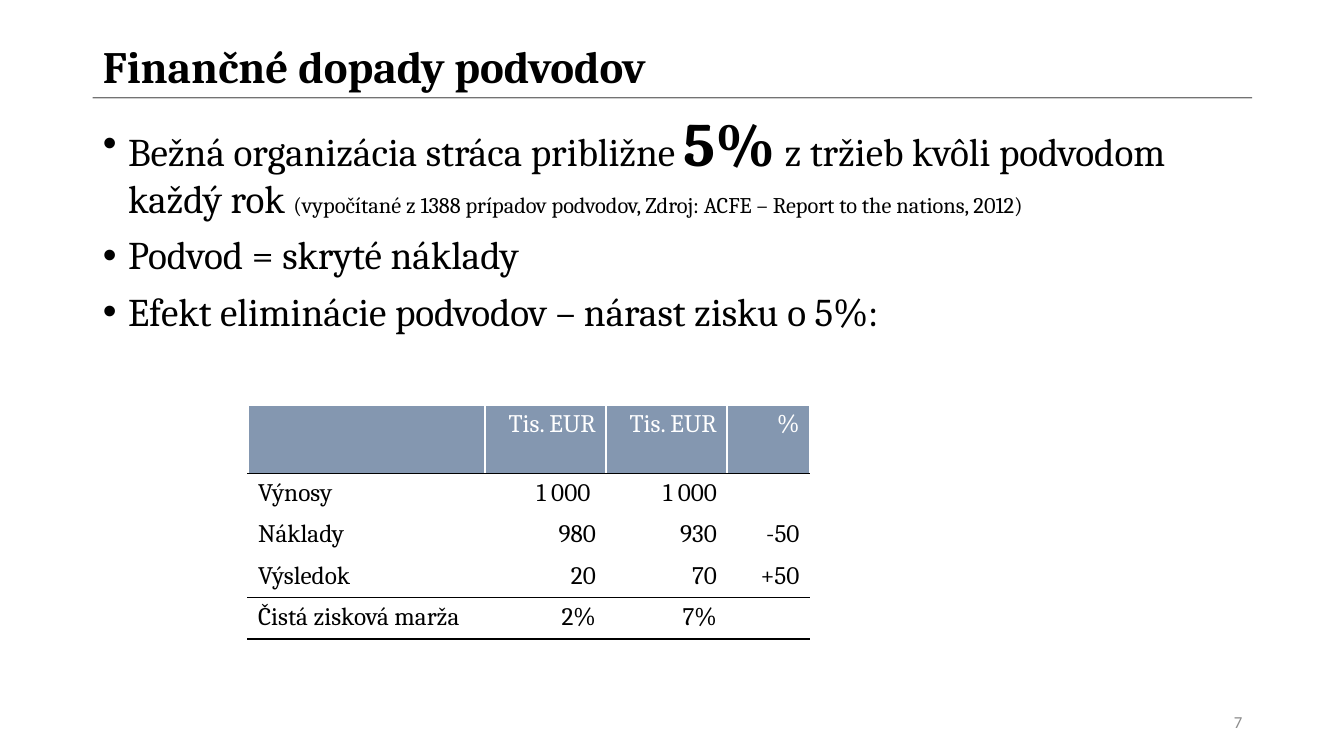
from dataclasses import dataclass

from lxml.etree import SubElement
from pptx import Presentation
from pptx.dml.color import RGBColor
from pptx.enum.text import MSO_ANCHOR as Anchor, MSO_AUTO_SIZE as AutoSize, PP_ALIGN as Align
from pptx.oxml.ns import qn
from pptx.util import Inches, Pt


@dataclass(frozen=True)
class Theme:
    text: str = "000000"
    light: str = "FFFFFF"
    header: str = "8497B0"
    muted: str = "8C8C8C"
    font: str = "Cambria"
    number_font: str = "Calibri"
    title_size: int = 32
    body_size: int = 28
    accent_size: int = 44
    source_size: int = 16
    table_size: int = 18
    number_size: int = 12


THEME = Theme()
LEFT, WIDTH = 0.92, 11.5

BULLETS = [
    [
        ("Bežná organizácia stráca približne ", THEME.body_size, False),
        ("5%", THEME.accent_size, True),
        (" z tržieb kvôli podvodom každý rok ", THEME.body_size, False),
        ("(vypočítané z 1388 prípadov podvodov, Zdroj: ACFE – Report to the nations, 2012)",
         THEME.source_size, False),
    ],
    [("Podvod = skryté náklady", THEME.body_size, False)],
    [("Efekt eliminácie podvodov – nárast zisku o 5%:", THEME.body_size, False)],
]

TABLE_ROWS = [
    ("", "Tis. EUR", "Tis. EUR", "%"),
    ("Výnosy", "1 000 ", "1 000", ""),
    ("Náklady", "980", "930", "-50"),
    ("Výsledok", "20", "70", "+50"),
    ("Čistá zisková marža", "2%", "7%", ""),
]
COLUMN_WIDTHS = (2.35, 1.2, 1.2, 0.82)
HEADER_HEIGHT, ROW_HEIGHT = 0.68, 0.41
RULED_ROWS = (0, 3, 4)  # rows with a dark rule below


def place(shape, left, top, width, height):
    shape.left, shape.top = Inches(left), Inches(top)
    shape.width, shape.height = Inches(width), Inches(height)


def add_run(paragraph, text, size, color=THEME.text, bold=False, font=THEME.font):
    run = paragraph.add_run()
    run.text = text
    run.font.name = font
    run.font.size = Pt(size)
    run.font.bold = bold
    run.font.color.rgb = RGBColor.from_string(color)


def prepare_frame(shape, anchor):
    frame = shape.text_frame
    frame.word_wrap = True
    frame.auto_size = AutoSize.NONE
    frame.vertical_anchor = anchor
    return frame


def add_title(slide, text):
    title = slide.shapes.title
    place(title, LEFT, 0.4, WIDTH, 0.57)
    paragraph = prepare_frame(title, Anchor.MIDDLE).paragraphs[0]
    paragraph.alignment = Align.LEFT
    paragraph.line_spacing = 0.9
    add_run(paragraph, text, THEME.title_size, bold=True)


def add_title_rule(slide):
    y = Inches(0.97)
    rule = slide.shapes.add_connector(1, Inches(LEFT), y, Inches(LEFT + WIDTH), y)
    rule.line.width = Pt(1)
    rule.line.color.rgb = RGBColor.from_string(THEME.text)
    properties = rule._element.spPr
    color = properties.find(".//" + qn("a:srgbClr"))
    SubElement(color, qn("a:alpha"), val="54000")
    SubElement(properties, qn("a:effectLst"))


def add_bullets(slide, items):
    body = slide.placeholders[1]
    place(body, LEFT, 1.07, WIDTH, 5.68)
    frame = prepare_frame(body, Anchor.TOP)
    for index, runs in enumerate(items):
        paragraph = frame.add_paragraph() if index else frame.paragraphs[0]
        properties = paragraph._p.get_or_add_pPr()
        properties.set("marL", str(Inches(0.25)))
        properties.set("indent", str(-Inches(0.25)))
        SubElement(properties, qn("a:buFont"), typeface="Arial")
        SubElement(properties, qn("a:buChar"), char="•")
        paragraph.line_spacing = 0.9
        paragraph.space_before = Pt(10 if index else 0)
        for text, size, bold in runs:
            add_run(paragraph, text, size, bold=bold)


def set_borders(cell, top, bottom):
    properties = cell._tc.get_or_add_tcPr()
    edges = {"lnL": THEME.light, "lnR": THEME.light, "lnT": top, "lnB": bottom}
    for edge, color in edges.items():
        line = SubElement(properties, qn("a:" + edge), w=str(Pt(1)))
        fill = SubElement(line, qn("a:solidFill"))
        SubElement(fill, qn("a:srgbClr"), val=color)


def rule_color(row):
    return THEME.text if row in RULED_ROWS else THEME.light


def add_profit_table(slide, rows):
    height = HEADER_HEIGHT + ROW_HEIGHT * (len(rows) - 1)
    table = slide.shapes.add_table(
        len(rows), len(COLUMN_WIDTHS), Inches(2.46), Inches(4.02),
        Inches(sum(COLUMN_WIDTHS)), Inches(height)).table
    table.horz_banding = False
    for column, width in zip(table.columns, COLUMN_WIDTHS):
        column.width = Inches(width)
    for r, values in enumerate(rows):
        table.rows[r].height = Inches(ROW_HEIGHT if r else HEADER_HEIGHT)
        for c, value in enumerate(values):
            cell = table.cell(r, c)
            set_borders(cell, rule_color(r - 1), rule_color(r))
            if r:
                cell.fill.background()
            else:
                cell.fill.solid()
                cell.fill.fore_color.rgb = RGBColor.from_string(THEME.header)
            paragraph = cell.text_frame.paragraphs[0]
            paragraph.alignment = Align.RIGHT if c else Align.LEFT
            if value:
                add_run(paragraph, value, THEME.table_size, THEME.text if r else THEME.light)


def add_page_number(slide, number):
    box = slide.shapes.add_textbox(Inches(9.42), Inches(6.96), Inches(3), Inches(0.4))
    paragraph = prepare_frame(box, Anchor.MIDDLE).paragraphs[0]
    paragraph.alignment = Align.RIGHT
    add_run(paragraph, number, THEME.number_size, THEME.muted, font=THEME.number_font)


def main():
    presentation = Presentation()
    presentation.slide_width = Inches(13.33)
    presentation.slide_height = Inches(7.5)
    slide = presentation.slides.add_slide(presentation.slide_layouts[1])

    # Heading
    add_title_rule(slide)
    add_title(slide, "Finančné dopady podvodov")
    # Content
    add_bullets(slide, BULLETS)
    add_profit_table(slide, TABLE_ROWS)
    # Footer
    add_page_number(slide, "7")
    presentation.save("out.pptx")


if __name__ == "__main__":
    main()
